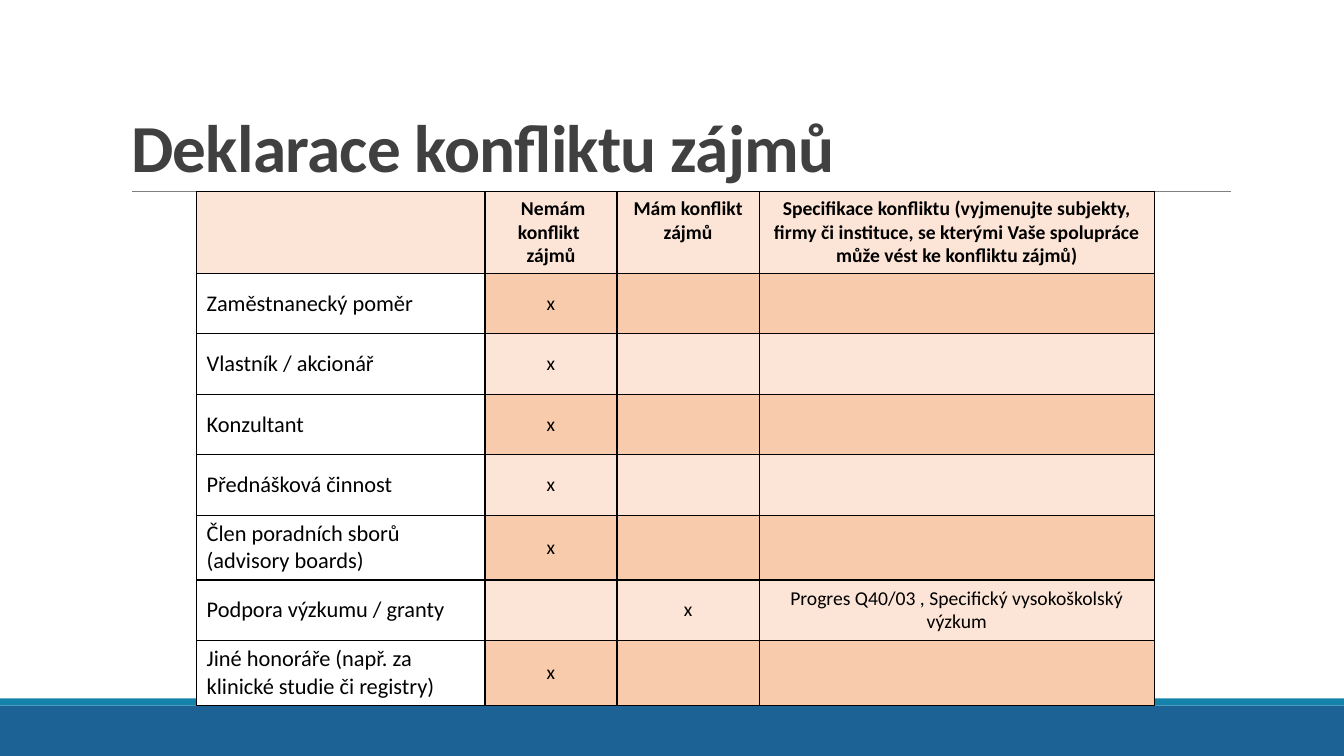
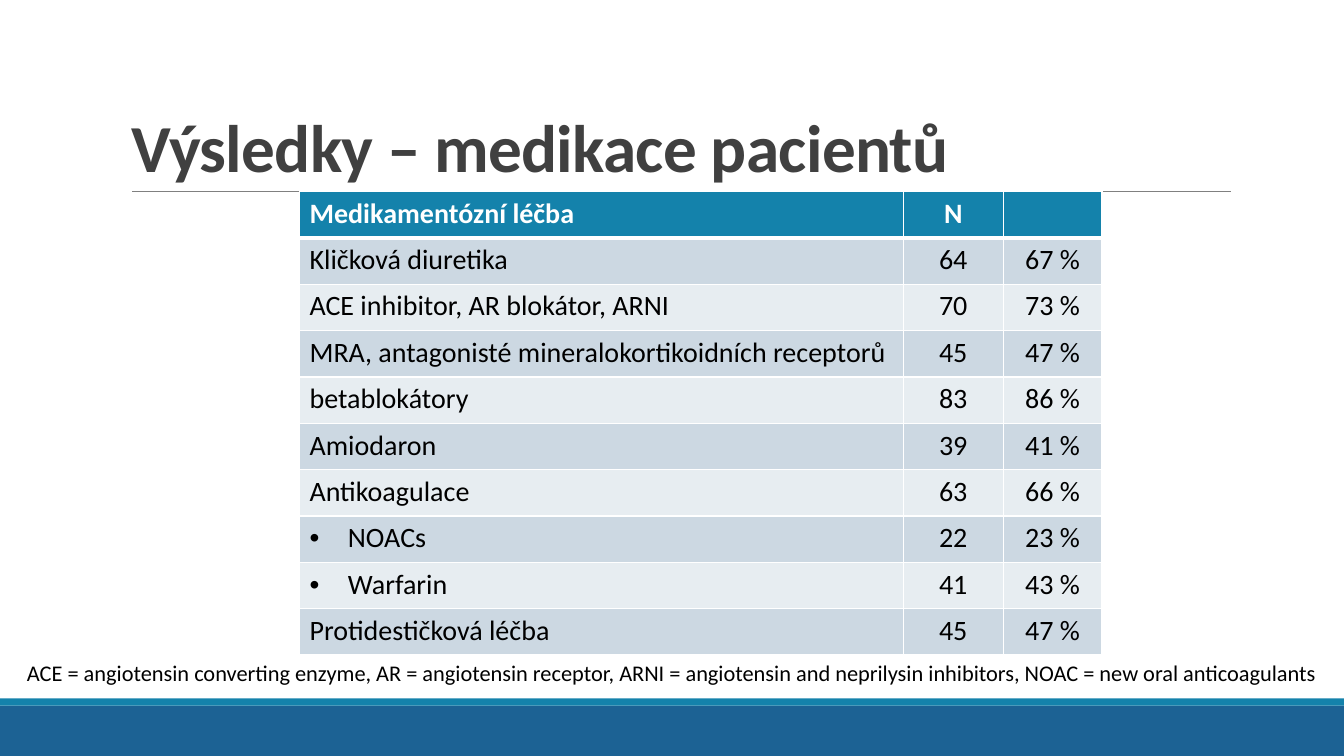
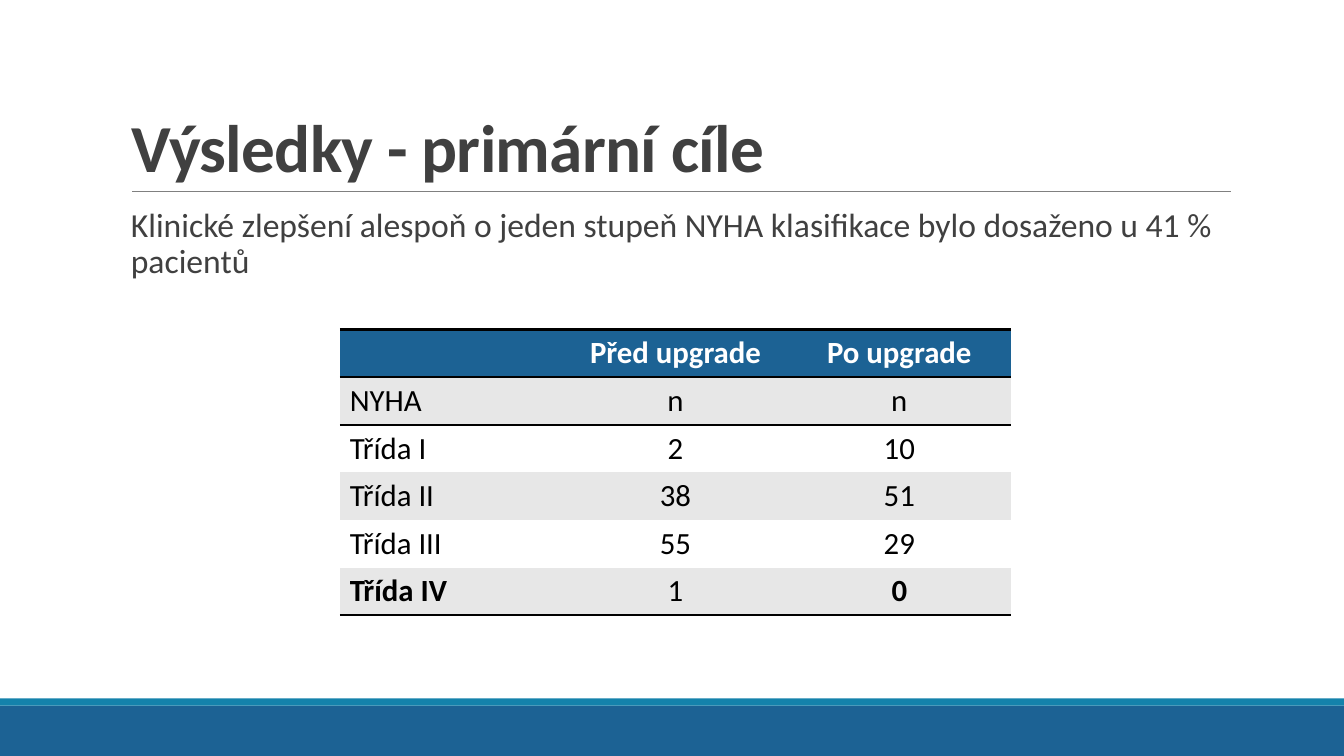
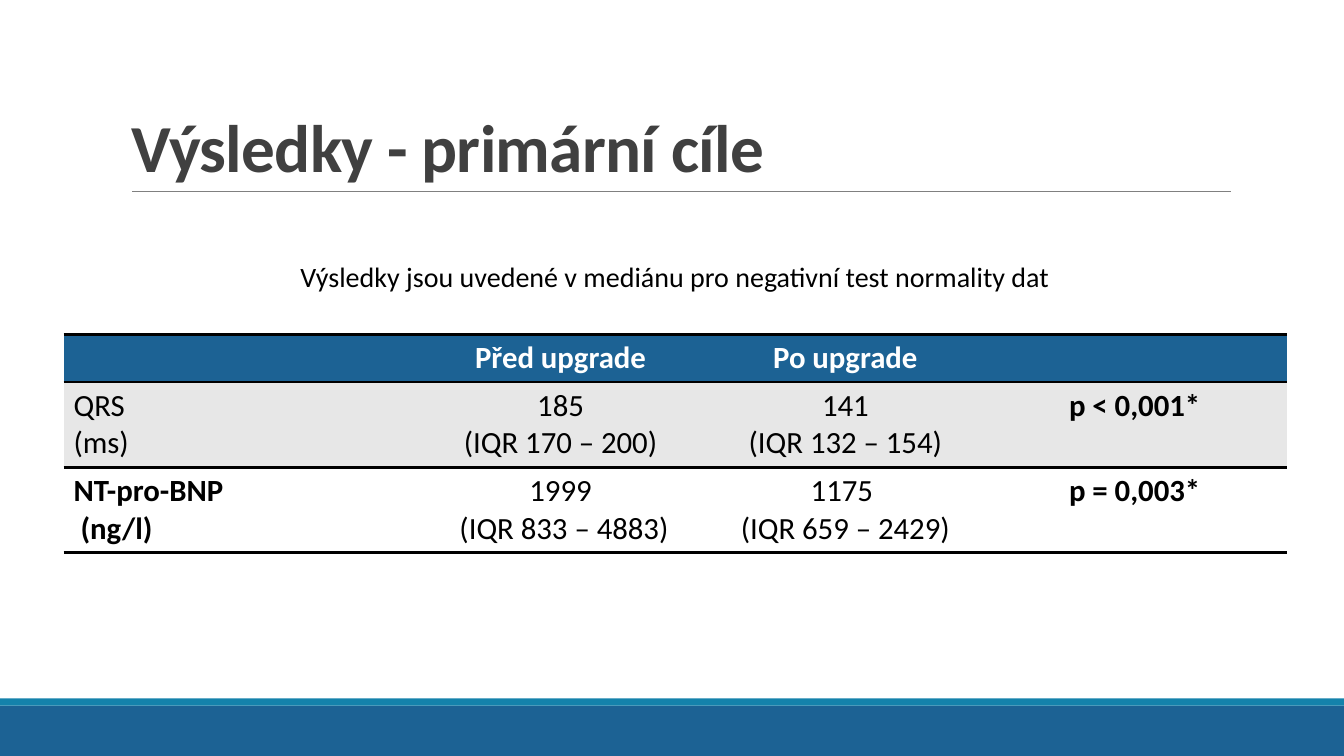
"""Four slides of clinical results with tables in one shared style."""
from lxml import etree
from pptx import Presentation
from pptx.dml.color import RGBColor
from pptx.enum import shapes, text
from pptx.oxml import ns
from pptx.util import Inches, Pt

FONT = "Calibri"
BLUE, TEAL, GREY = "1C6294", "1482AB", "404040"
BLACK, WHITE = "000000", "FFFFFF"
LEFT, MID = text.PP_ALIGN.LEFT, text.PP_ALIGN.CENTER
NO_GRID = "{2D5ABB26-0587-4C30-8999-92F81FD0307C}"


def rgb(code):
    return RGBColor.from_string(code)


def paint(item, code):
    item.fill.solid()
    item.fill.fore_color.rgb = rgb(code)


def write(frame, words, size=20, color=BLACK, bold=False, align=LEFT,
          lead=None, track=None):
    frame.word_wrap = True
    for i, line in enumerate(words.split("\n")):
        para = frame.paragraphs[0] if i == 0 else frame.add_paragraph()
        para.alignment = align
        if lead:
            para.line_spacing = lead
        run = para.add_run()
        run.text = line
        font = run.font
        font.name, font.size, font.bold = FONT, Pt(size), bold
        font.color.rgb = rgb(color)
        if track:
            run._r.get_or_add_rPr().set("spc", str(int(track * 100)))


def border(cell, edges):
    props = cell._tc.get_or_add_tcPr()
    for side in "LRTB":
        if side in edges:
            color, width = edges[side]
            line = etree.SubElement(props, ns.qn(f"a:ln{side}"), w=str(Pt(width)))
            fill = etree.SubElement(line, ns.qn("a:solidFill"))
            etree.SubElement(fill, ns.qn("a:srgbClr"), val=color)


def bullet(cell):
    props = cell.text_frame.paragraphs[0]._p.get_or_add_pPr()
    props.set("marL", str(Inches(0.38)))
    props.set("indent", str(-Inches(0.38)))
    etree.SubElement(props, ns.qn("a:buFont"), typeface="Arial")
    etree.SubElement(props, ns.qn("a:buChar"), char="•")


class Deck:
    """Holds the presentation, its style and the current slide."""

    def __init__(self):
        self.prs = Presentation()
        self.prs.slide_width = Inches(13.33)
        self.prs.slide_height = Inches(7.5)
        self.slide = None

    def page(self, name):
        self.slide = self.prs.slides.add_slide(self.prs.slide_layouts[5])
        self.band(7, 0.5, BLUE)
        self.band(6.93, 0.07, TEAL)
        self.rule(1.31, 12.21, 1.9)
        title = self.slide.shapes.title
        title.left, title.top = Inches(1.2), Inches(0.31)
        title.width, title.height = Inches(11), Inches(1.59)
        frame = title.text_frame
        frame.vertical_anchor = text.MSO_ANCHOR.BOTTOM
        frame.auto_size = text.MSO_AUTO_SIZE.NONE
        write(frame, name, size=48, color=GREY, bold=True, lead=0.85, track=-0.5)

    def band(self, top, height, color):
        bar = self.slide.shapes.add_shape(
            shapes.MSO_SHAPE.RECTANGLE, 0, Inches(top),
            self.prs.slide_width, Inches(height))
        bar.shadow.inherit = False
        paint(bar, color)
        bar.line.fill.background()

    def rule(self, start, end, top):
        line = self.slide.shapes.add_connector(
            shapes.MSO_CONNECTOR.STRAIGHT, Inches(start), Inches(top),
            Inches(end), Inches(top))
        line.line.color.rgb = rgb("808080")
        line.line.width = Pt(0.5)
        etree.SubElement(line._element.spPr, ns.qn("a:effectLst"))

    def note(self, words, at, **form):
        box = self.slide.shapes.add_textbox(*map(Inches, at))
        write(box.text_frame, words, **form)

    def table(self, left, top, cols, rows, data, look):
        """Draws data; look(row, col) gives fill, edges and text format."""
        frame = self.slide.shapes.add_table(
            len(rows), len(cols), Inches(left), Inches(top),
            Inches(sum(cols)), Inches(sum(rows)))
        grid = frame.table
        grid.first_row = grid.horz_banding = False
        grid._tbl.tblPr.find(ns.qn("a:tableStyleId")).text = NO_GRID
        for col, width in zip(grid.columns, cols):
            col.width = Inches(width)
        for row, height in zip(grid.rows, rows):
            row.height = Inches(height)
        for r, line in enumerate(data):
            for c, words in enumerate(line):
                cell, form = grid.cell(r, c), look(r, c)
                border(cell, form.pop("edges"))
                paint(cell, form.pop("fill"))
                cell.vertical_anchor = form.pop("anchor", text.MSO_ANCHOR.TOP)
                if words:
                    write(cell.text_frame, words, align=MID if c else LEFT, **form)
        return grid


def peach(r, c):
    fill = "F8CBAD" if r % 2 else "FCE4D6"
    form = dict(fill=WHITE if r and not c else fill, bold=r == 0,
                size=14 if c else 16, edges=dict.fromkeys("LRTB", (BLACK, 1)))
    if r:
        form["anchor"] = text.MSO_ANCHOR.MIDDLE
    return form


def teal(r, c):
    edges = dict.fromkeys("LRTB", (WHITE, 1))
    if r < 2:
        edges["T" if r else "B"] = (WHITE, 3)
    if r == 0:
        return dict(fill=TEAL, color=WHITE, bold=True, edges=edges)
    return dict(fill="CCD8E2" if r % 2 else "E7EDF1", edges=edges)


def ruled(last, strong):
    """Gives the look of a table with black rules and bold cells."""
    def look(r, c):
        sides = ("T" if r < 2 else "") + ("B" if r in (0, last) else "")
        fill = BLUE if r == 0 else "E7E7E7" if r % 2 else WHITE
        return dict(fill=fill, size=22, color=BLACK if r else WHITE,
                    bold=r == 0 or (r, c) in strong,
                    edges=dict.fromkeys(sides, (BLACK, 2)))
    return look


def main():
    deck = Deck()

    deck.page("Deklarace konfliktu zájmů")
    deck.table(1.95, 1.9, [2.86, 1.31, 1.41, 3.92],
               [0.81, 0.6, 0.6, 0.6, 0.6, 0.64, 0.6, 0.64], [
        ["", " Nemám konflikt \nzájmů", "Mám konflikt zájmů",
         "Specifikace konfliktu (vyjmenujte subjekty, firmy či instituce, "
         "se kterými Vaše spolupráce může vést ke konfliktu zájmů)"],
        ["Zaměstnanecký poměr", "x", "", ""],
        ["Vlastník / akcionář", "x", "", ""],
        ["Konzultant", "x", "", ""],
        ["Přednášková činnost", "x", "", ""],
        ["Člen poradních sborů (advisory boards)", "x", "", ""],
        ["Podpora výzkumu / granty", "", "x",
         "Progres Q40/03 , Specifický vysokoškolský výzkum"],
        ["Jiné honoráře (např. za klinické studie či registry)", "x", "", ""],
    ], peach)

    deck.page("Výsledky – medikace pacientů")
    drugs = [
        ["Medikamentózní léčba", "N", ""],
        ["Kličková diuretika", "64", "67 %"],
        ["ACE inhibitor, AR blokátor, ARNI", "70", "73 %"],
        ["MRA, antagonisté mineralokortikoidních receptorů", "45", "47 %"],
        ["betablokátory", "83", "86 %"],
        ["Amiodaron", "39", "41 %"],
        ["Antikoagulace", "63", "66 %"],
        ["NOACs", "22", "23 %"],
        ["Warfarin", "41", "43 %"],
        ["Protidestičková léčba", "45", "47 %"],
    ]
    grid = deck.table(2.97, 1.9, [5.99, 0.99, 0.98], [0.46] * len(drugs), drugs, teal)
    for r in (7, 8):
        bullet(grid.cell(r, 0))
    deck.note("ACE = angiotensin converting enzyme, AR = angiotensin receptor, "
              "ARNI = angiotensin and neprilysin inhibitors, "
              "NOAC = new oral anticoagulants",
              (0, 6.49, 13.33, 0.37), size=16, align=MID)

    deck.page("Výsledky - primární cíle")
    stages = [
        ["", "Před upgrade", "Po upgrade"],
        ["NYHA", "n", "n"],
        ["Třída I", "2", "10"],
        ["Třída II", "38", "51"],
        ["Třída III", "55", "29"],
        ["Třída IV", "1", "0"],
    ]
    deck.table(3.37, 3.27, [2.22] * 3, [0.47] * len(stages), stages,
               ruled(5, {(5, 0), (5, 2)}))
    deck.note("Klinické zlepšení alespoň o jeden stupeň NYHA klasifikace bylo "
              "dosaženo u 41 % pacientů",
              (1.2, 2.02, 11, 0.97), size=24, color=GREY, lead=0.9)

    deck.page("Výsledky - primární cíle")
    deck.table(0.63, 3.32, [3.46, 2.94, 2.71, 3.03], [0.47, 0.84, 0.84], [
        ["", "Před upgrade", "Po upgrade", ""],
        ["QRS\n(ms)", "185\n(IQR 170 – 200)", "141\n(IQR 132 – 154)", "p < 0,001*"],
        ["NT-pro-BNP\n (ng/l)", "1999\n (IQR 833 – 4883)",
         "1175 \n(IQR 659 – 2429)", "p = 0,003*"],
    ], ruled(2, {(1, 3), (2, 0), (2, 3)}))
    deck.note("Výsledky jsou uvedené v mediánu pro negativní test normality dat",
              (0.03, 2.53, 13.33, 0.44), align=MID)

    deck.prs.save("out.pptx")


if __name__ == "__main__":
    main()
